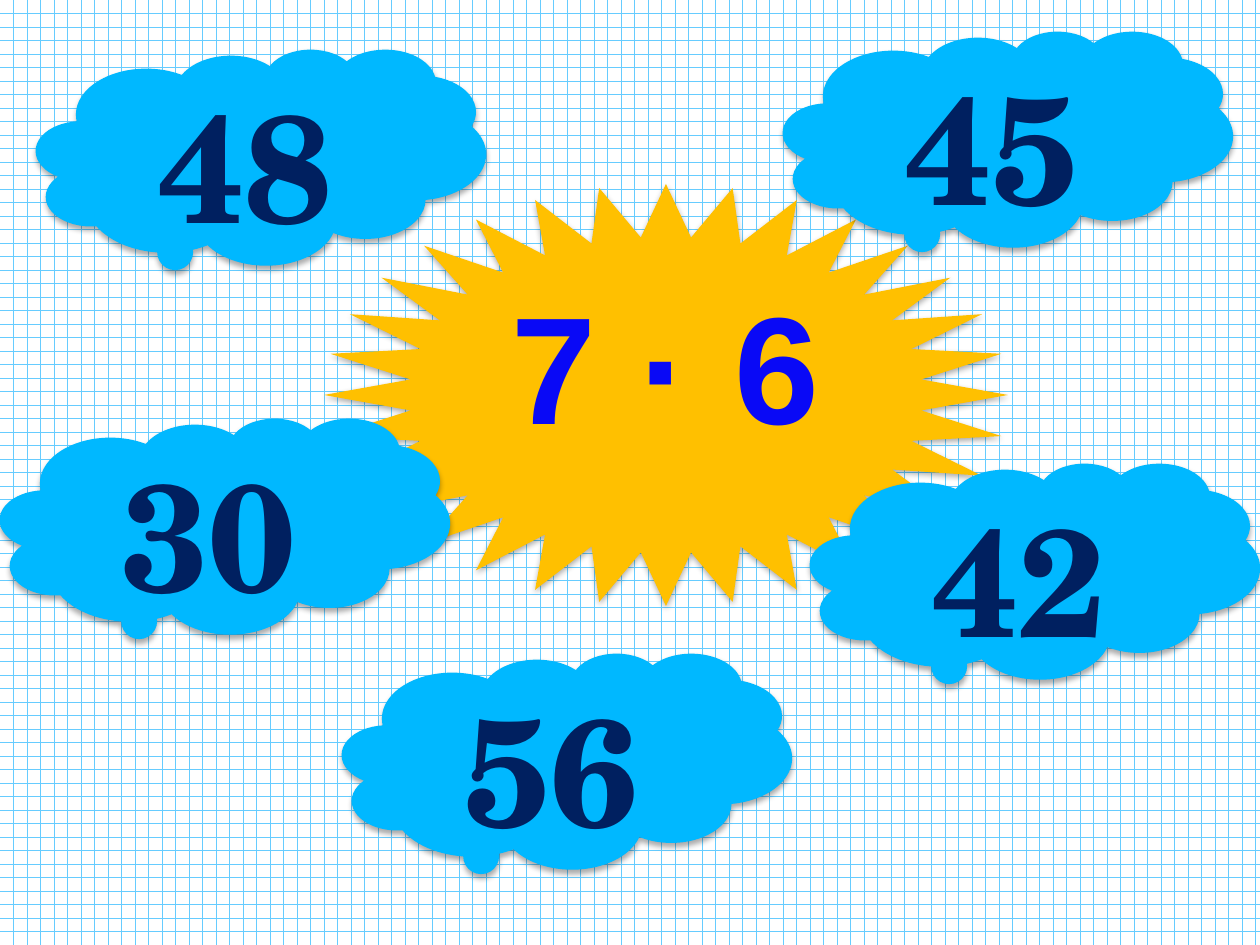
"""Build a multiplication slide: a sun with the question and five clouds with answers."""
from lxml import etree
from pptx import Presentation
from pptx.dml.color import RGBColor
from pptx.enum.dml import MSO_PATTERN
from pptx.enum.shapes import MSO_SHAPE
from pptx.enum.text import MSO_ANCHOR, PP_ALIGN
from pptx.oxml.ns import qn
from pptx.util import Pt

BRICK = MSO_PATTERN.HORIZONTAL_BRICK
SUN, CLOUD = MSO_SHAPE.STAR_32_POINT, MSO_SHAPE.CLOUD_CALLOUT
TOP, CENTER = MSO_ANCHOR.TOP, PP_ALIGN.CENTER

PX = 8000
PAGE_SIZE = (1260, 945)
COLORS = {
    "paper": "FFFFFF",
    "grid": "66CCFF",
    "sun": "FFC000",
    "cloud": "00B8FF",
    "answer": "002060",
    "question": "0909F6",
    "question_end": "0101B3",
    "shadow": "000000",
}
QUESTION = "7 · 6 "
SUN_BOX = (324, 184, 684, 422)
CLOUD_SIZE = (450, 216)
CLOUD_TAIL = (-0.157, 0.363)
ANSWERS = [
    ("48", 36, 49),
    ("45", 783, 31),
    ("30", 0, 418),
    ("42", 810, 463),
    ("56", 342, 653),
]


def color(name):
    return RGBColor.from_string(COLORS[name])


def add_shadow(shape):
    shape.shadow.inherit = False
    effects = shape._element.spPr.find(qn("a:effectLst"))
    shadow = etree.SubElement(effects, qn("a:outerShdw"), blurRad=str(Pt(3.5)),
                              dist=str(Pt(2.2)), dir="5400000", rotWithShape="0")
    tint = etree.SubElement(shadow, qn("a:srgbClr"), val=COLORS["shadow"])
    etree.SubElement(tint, qn("a:alpha"), val="32000")


def add_figure(page, kind, box, fill, text, font_name):
    shape = page.shapes.add_shape(kind, *(length * PX for length in box))
    shape.fill.solid()
    shape.fill.fore_color.rgb = color(fill)
    shape.line.fill.background()
    add_shadow(shape)
    frame = shape.text_frame
    frame.word_wrap = True
    frame.vertical_anchor = TOP
    para = frame.paragraphs[0]
    para.text = text
    para.alignment = CENTER
    para.line_spacing = 0.93
    para.font.name = font_name
    para.font.size = Pt(96)
    para.font.bold = True
    return shape, para


def add_question(page):
    para = add_figure(page, SUN, SUN_BOX, "sun", QUESTION, "Arial")[1]
    ink = para.font.fill
    ink.gradient()
    ink.gradient_angle = 270
    stops = [("question", 0.25), ("question_end", 1)]
    for stop, (name, position) in zip(ink.gradient_stops, stops):
        stop.color.rgb = color(name)
        stop.position = position
    para._p.pPr.find(qn("a:defRPr")).set("spc", "50")


def add_answer(page, text, left, top):
    shape, para = add_figure(page, CLOUD, (left, top, *CLOUD_SIZE), "cloud",
                             text, "TeX Gyre Schola")
    for index, value in enumerate(CLOUD_TAIL):
        shape.adjustments[index] = value
    para.font.color.rgb = color("answer")


def main():
    deck = Presentation()
    deck.slide_width, deck.slide_height = (length * PX for length in PAGE_SIZE)
    page = deck.slides.add_slide(deck.slide_layouts[6])
    paper = page.background.fill
    paper.patterned()
    paper.pattern = BRICK
    paper.fore_color.rgb = color("grid")
    paper.back_color.rgb = color("paper")
    add_question(page)
    for answer in ANSWERS:
        add_answer(page, *answer)
    deck.save("out.pptx")


if __name__ == "__main__":
    main()
